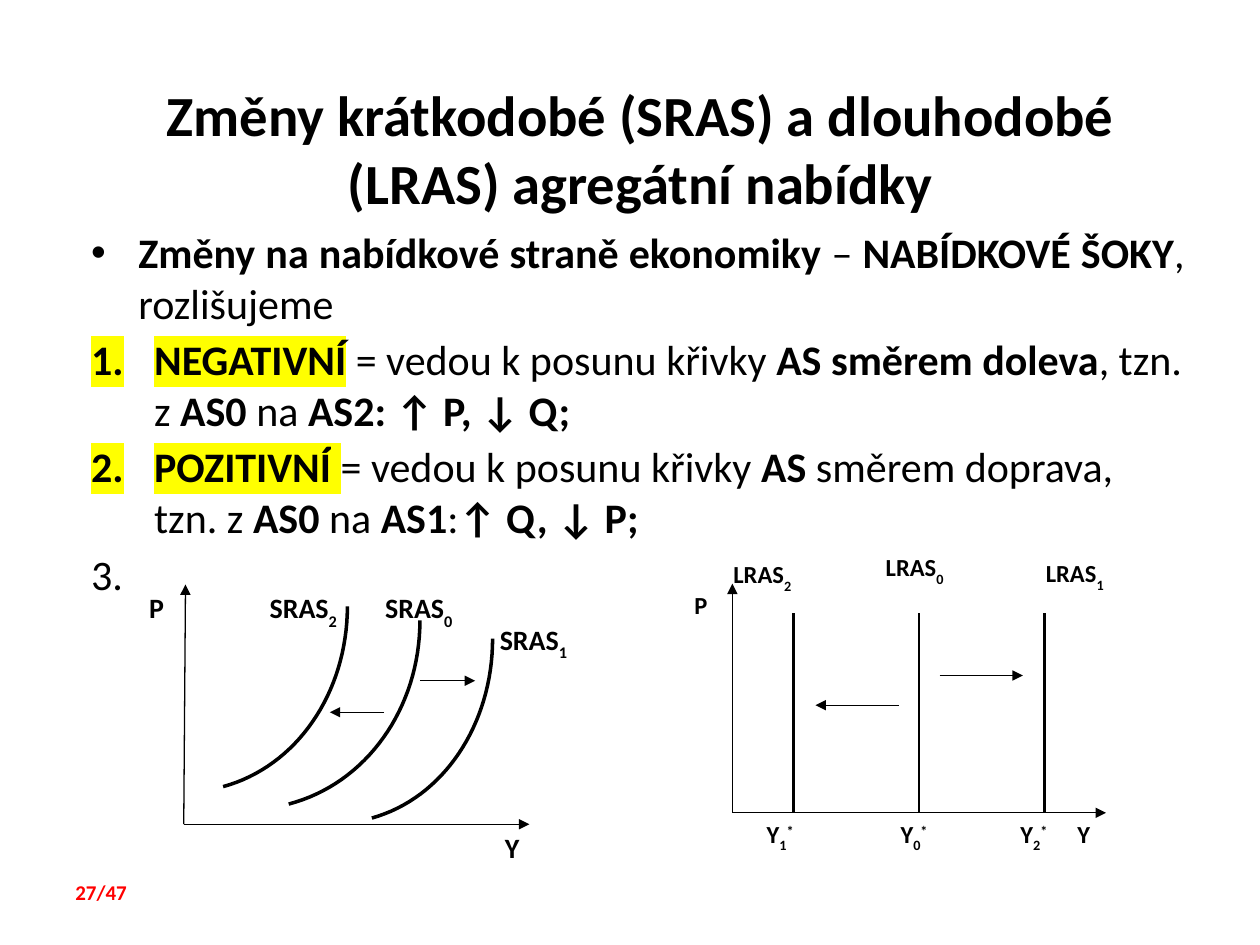
from lxml import etree
from pptx import Presentation
from pptx.dml.color import RGBColor
from pptx.enum import shapes, text
from pptx.oxml import ns
from pptx.util import Pt

BOLD = dict(bold=True)
MARKED = dict(highlight="FFFF00")
SUB = dict(bold=True, baseline=-30)
SUPER = dict(bold=True, baseline=30)


def color(value):
    return RGBColor.from_string(value)


def add_element(parent, tag, **attributes):
    return etree.SubElement(parent, ns.qn(tag), attributes)


def add_span(para, content, size, bold=False, ink="000000", font="Calibri",
             highlight=None, baseline=0):
    span = para.add_run()
    span.text = content
    span.font.size = Pt(size)
    span.font.bold = bold
    span.font.color.rgb = color(ink)
    properties = span._r.get_or_add_rPr()
    if highlight:
        mark = add_element(properties, "a:highlight")
        add_element(mark, "a:srgbClr", val=highlight)
    if baseline:
        properties.set("baseline", str(baseline * 1000))
    span.font.name = font


def fill_para(para, spans, size, align=text.PP_ALIGN.LEFT, before=0, margin=0,
              hanging=0, bullet=None, **style):
    """Format a paragraph; spans are (content, format) pairs."""
    para.alignment = align
    para.space_before = Pt(before)
    properties = para._p.get_or_add_pPr()
    properties.set("marL", str(Pt(margin)))
    properties.set("indent", str(Pt(-hanging)))
    if bullet == "number":
        add_element(properties, "a:buFont", typeface="+mj-lt")
        add_element(properties, "a:buAutoNum", type="arabicPeriod")
    elif bullet:
        add_element(properties, "a:buFont", typeface="Arial")
        add_element(properties, "a:buChar", char=bullet)
    for content, form in spans:
        add_span(para, content, size, **{**style, **form})


class Slide:
    """Draws on the current page, or in the group begun last."""

    def __init__(self, page):
        self.page = page
        self.target = page.shapes

    def begin_group(self):
        self.target = self.page.shapes.add_group_shape().shapes

    def end_group(self):
        self.target = self.page.shapes

    def box(self, left, top, width, height, fill=None, anchor=text.MSO_ANCHOR.TOP):
        place = Pt(left), Pt(top), Pt(width), Pt(height)
        if fill:
            box = self.target.add_shape(shapes.MSO_SHAPE.RECTANGLE, *place)
            box.shadow.inherit = False
            box.fill.solid()
            box.fill.fore_color.rgb = color(fill)
            box.line.fill.background()
        else:
            box = self.target.add_textbox(*place)
        frame = box.text_frame
        frame.word_wrap = True
        frame.vertical_anchor = anchor
        return frame

    def label(self, left, top, width, height, spans, size, fill=None,
              anchor=text.MSO_ANCHOR.TOP, **form):
        frame = self.box(left, top, width, height, fill, anchor)
        fill_para(frame.paragraphs[0], spans, size, **form)

    def line(self, x1, y1, x2, y2, weight=0.75, arrow=True):
        line = self.target.add_connector(
            shapes.MSO_CONNECTOR.STRAIGHT, Pt(x1), Pt(y1), Pt(x2), Pt(y2))
        line.line.color.rgb = color("000000")
        line.line.width = Pt(weight)
        if arrow:
            add_element(line.line._get_or_add_ln(), "a:tailEnd", type="triangle")
        add_element(line._element.spPr, "a:effectLst")

    def supply_curve(self, x1, y1, x2, y2, steps=32):
        """A cubic curve that rises ever more steeply to the right."""
        points = []
        for step in range(steps + 1):
            t = step / steps
            a, b, c = 3 * t * (1 - t) ** 2, 3 * t ** 2 * (1 - t), t ** 3
            points.append((Pt(x1 + (x2 - x1) * (0.59 * a + b + c)),
                           Pt(y1 + (y2 - y1) * (0.11 * a + 0.52 * b + c))))
        builder = self.target.build_freeform(*points[0])
        builder.add_line_segments(points[1:], close=False)
        curve = builder.convert_to_shape()
        curve.shadow.inherit = False
        curve.fill.background()
        curve.line.color.rgb = color("000000")
        curve.line.width = Pt(2)


def add_body(slide):
    frame = slide.box(36, 126, 648, 373)
    number = dict(margin=45, hanging=36, bullet="number", before=3.6)
    items = [
        ([("Změny na nabídkové straně ekonomiky ", BOLD), ("– ", {}),
          ("NABÍDKOVÉ ŠOKY", BOLD), (", rozlišujeme ", {})],
         dict(margin=36, hanging=27, bullet="•", align=text.PP_ALIGN.JUSTIFY)),
        ([("NEGATIVNÍ", {**BOLD, **MARKED}), (" = vedou k posunu křivky ", {}),
          ("AS směrem doleva", BOLD), (", tzn. z ", {}), ("AS0 ", BOLD),
          ("na ", {}), ("AS2: ↑ P, ↓ Q;", BOLD)], number),
        ([("POZITIVNÍ", {**BOLD, **MARKED}), (" ", MARKED),
          ("= vedou k posunu křivky ", {}), ("AS ", BOLD),
          ("směrem doprava, tzn. z ", {}), ("AS0", BOLD), (" na ", {}),
          ("AS1", BOLD), (":", {}), ("↑ Q, ↓ P;", BOLD)], number),
        ([(" ", {})], number),
    ]
    for index, (spans, form) in enumerate(items):
        para = frame.add_paragraph() if index else frame.paragraphs[0]
        fill_para(para, spans, 24, **form)


def add_short_run(slide):
    slide.begin_group()
    slide.line(105, 471, 106, 334)
    slide.line(105, 471, 302.5, 471)
    for curve in [(127.5, 449.5, 198.5, 346.5), (165, 459.5, 240, 354.5),
                  (212.5, 467.5, 281.5, 365)]:
        slide.supply_curve(*curve)
    slide.line(240, 389, 271.5, 389)
    slide.line(219.5, 407, 188.5, 407)
    slide.label(74, 334, 31, 27.5, [("P", BOLD)], 16, align=text.PP_ALIGN.CENTER)
    slide.label(281.5, 471, 31, 27.5, [("Y", BOLD)], 16)
    for index, left, top, width, margin in [
            ("2", 147, 334, 62, 0), ("0", 209, 334, 62, 4), ("1", 271.5, 352, 73, 7)]:
        slide.label(left, top, width, 27.5, [("SRAS", BOLD), (index, SUB)], 16,
                    margin=margin)
    slide.end_group()


def add_long_run(slide):
    slide.begin_group()
    white = dict(fill="FFFFFF")
    slide.label(382.5, 333.5, 36, 26, [("P", BOLD)], 14,
                align=text.PP_ALIGN.CENTER, **white)
    slide.label(608.5, 464.5, 36, 26, [("Y", BOLD)], 14, **white)
    for index, left, top, form in [
            ("1", 590.5, 315.5, white), ("0", 499, 312, white), ("2", 412, 316, {})]:
        slide.label(left, top, 71, 26, [("LRAS", BOLD), (index, SUB)], 14, **form)
    slide.line(418.5, 464.5, 632, 464.5)
    slide.line(418.5, 464.5, 418.5, 333.5)
    for column in range(3):
        x = 453.5 + 71.6 * column
        slide.line(x, 464.5, x, 350.5, weight=1.5, arrow=False)
    slide.line(537, 386, 584.5, 386)
    slide.line(513.5, 403, 466, 403)
    for index, left, margin in [("2", 573, 3), ("1", 418.5, 12.5), ("0", 501, 6.5)]:
        slide.label(left, 464.5, 60, 26,
                    [("Y", BOLD), (index, SUB), ("*", SUPER)], 14, margin=margin)
    slide.end_group()


def main():
    deck = Presentation()
    deck.slide_width, deck.slide_height = Pt(720), Pt(540)
    slide = Slide(deck.slides.add_slide(deck.slide_layouts[6]))
    slide.label(42, 52, 648, 65,
                [("Změny krátkodobé (SRAS) a dlouhodobé (LRAS) agregátní nabídky", BOLD)],
                32.4, fill="FFFFFF", anchor=text.MSO_ANCHOR.MIDDLE,
                align=text.PP_ALIGN.CENTER)
    add_body(slide)
    add_short_run(slide)
    add_long_run(slide)
    slide.label(36, 499, 66, 22, [("27/47", BOLD)], 12, ink="FF0000")
    deck.save("out.pptx")


if __name__ == "__main__":
    main()
